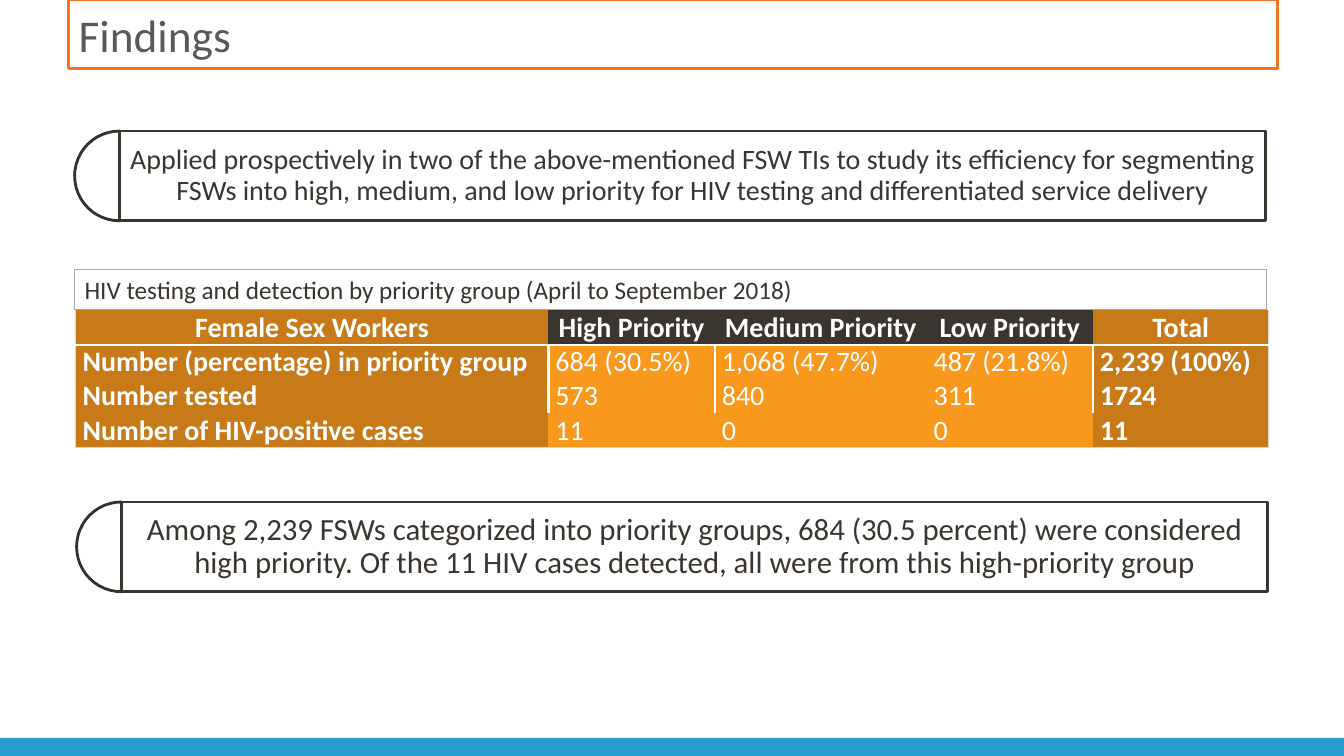
from lxml import etree
from pptx import Presentation
from pptx.dml.color import RGBColor
from pptx.enum.shapes import MSO_SHAPE
from pptx.enum.text import MSO_ANCHOR, MSO_AUTO_SIZE, PP_ALIGN
from pptx.oxml.ns import qn
from pptx.util import Inches, Pt

RECT, PIE = MSO_SHAPE.RECTANGLE, MSO_SHAPE.PIE
LEFT, CENTER = PP_ALIGN.LEFT, PP_ALIGN.CENTER
MIDDLE, TOP = MSO_ANCHOR.MIDDLE, MSO_ANCHOR.TOP
NO_AUTOFIT = MSO_AUTO_SIZE.NONE

WHITE = RGBColor(0xFF, 0xFF, 0xFF)
INK = RGBColor(0x3B, 0x35, 0x2F)
PIE_LINE = RGBColor(0x36, 0x30, 0x2B)
TITLE_GRAY = RGBColor(0x59, 0x59, 0x59)
TITLE_LINE = RGBColor(0xF3, 0x74, 0x21)
CAPTION_LINE = RGBColor(0xA6, 0xA6, 0xA6)
TABLE_EDGE = RGBColor(0xD9, 0xD9, 0xD9)
DARK_ORANGE = RGBColor(0xC7, 0x7A, 0x17)
ORANGE = RGBColor(0xF8, 0x98, 0x1D)
BLUE = RGBColor(0x27, 0x9E, 0xCE)

PLAIN_TABLE_STYLE = "{2D5ABB26-0587-4C30-8999-92F81FD0307C}"

COLUMN_WIDTHS = [4.69, 1.65, 2.1, 1.65, 1.74]
TESTING_ROWS = [
    ["Female Sex Workers", "High Priority", "Medium Priority", "Low Priority", "Total"],
    ["Number (percentage) in priority group", "684 (30.5%)", "1,068 (47.7%)",
     "487 (21.8%)", "2,239 (100%)"],
    ["Number tested", "573", "840", "311", "1724"],
    ["Number of HIV-positive cases", "11", "0", "0", "11"],
]


def write(frame, text, size, color=INK, bold=False, align=LEFT, anchor=MIDDLE,
          spacing=None, inset=None):
    frame.word_wrap = True
    frame.auto_size = NO_AUTOFIT
    frame.vertical_anchor = anchor
    if inset is not None:
        frame.margin_left = frame.margin_right = Inches(inset)
        frame.margin_top = frame.margin_bottom = Inches(inset)
    paragraph = frame.paragraphs[0]
    paragraph.alignment = align
    paragraph.line_spacing = spacing
    run = paragraph.add_run()
    run.text = text
    run.font.name = "Calibri"
    run.font.size = Pt(size)
    run.font.bold = bold
    run.font.color.rgb = color


class FindingsSlide:
    def __init__(self, presentation):
        self.slide = presentation.slides.add_slide(presentation.slide_layouts[5])

    def paint(self, shape, fill, line, width):
        if fill is None:
            shape.fill.background()
        else:
            shape.fill.solid()
            shape.fill.fore_color.rgb = fill
        if line is None:
            shape.line.fill.background()
        else:
            shape.line.color.rgb = line
            shape.line.width = Pt(width)

    def title(self, text, left, top, width, height):
        title = self.slide.shapes.title
        title.left, title.top = Inches(left), Inches(top)
        title.width, title.height = Inches(width), Inches(height)
        self.paint(title, WHITE, TITLE_LINE, 2)
        write(title.text_frame, text, size=32.4, color=TITLE_GRAY)

    def shape(self, kind, left, top, width, height, fill=None, line=None, line_width=2):
        shape = self.slide.shapes.add_shape(
            kind, Inches(left), Inches(top), Inches(width), Inches(height))
        shape.shadow.inherit = False
        self.paint(shape, fill, line, line_width)
        return shape

    def statement(self, text, left, top, size, inset):
        """Half disc joined to a framed sentence."""
        diameter = 0.89
        half_disc = self.shape(PIE, left, top, diameter, diameter, WHITE, PIE_LINE)
        # Start and end angles of 90 and 270 degrees
        half_disc.adjustments[0], half_disc.adjustments[1] = 54, 162
        box = self.shape(RECT, left + diameter / 2, top, 11.37, diameter, line=INK)
        write(box.text_frame, text, size=size, align=CENTER, spacing=0.9, inset=inset)

    def border(self, cell, side, color, width):
        line = etree.SubElement(cell._tc.get_or_add_tcPr(), qn("a:ln" + side),
                                w=str(Pt(width)))
        fill = etree.SubElement(line, qn("a:solidFill"))
        etree.SubElement(fill, qn("a:srgbClr"), val=str(color))

    def table(self, rows, widths, left, top, row_height):
        last_row, last_column = len(rows) - 1, len(widths) - 1
        table = self.slide.shapes.add_table(
            len(rows), len(widths), Inches(left), Inches(top),
            Inches(sum(widths)), Inches(row_height * len(rows))).table
        table._tbl.tblPr.find(qn("a:tableStyleId")).text = PLAIN_TABLE_STYLE
        for column, width in zip(table.columns, widths):
            column.width = Inches(width)
        for r, row in enumerate(rows):
            table.rows[r].height = Inches(row_height)
            for c, text in enumerate(row):
                cell = table.cell(r, c)
                header, outer = r == 0, c in (0, last_column)
                divided = 0 < r < last_row
                # Borders, in the order left, right, bottom
                if c == 0:
                    self.border(cell, "L", TABLE_EDGE, 1)
                elif divided and c in (1, last_column):
                    self.border(cell, "L", WHITE, 2)
                if c == last_column:
                    self.border(cell, "R", TABLE_EDGE, 1)
                elif divided and c in (0, last_column - 1):
                    self.border(cell, "R", WHITE, 2)
                if header:
                    self.border(cell, "B", WHITE, 2)
                elif r == last_row:
                    self.border(cell, "B", TABLE_EDGE, 1)
                # Fill and text
                cell.fill.solid()
                cell.fill.fore_color.rgb = DARK_ORANGE if outer else INK if header else ORANGE
                cell.margin_left = cell.margin_right = Inches(0.07)
                cell.margin_top = cell.margin_bottom = 0
                cell.vertical_anchor = MIDDLE if header else TOP
                write(cell.text_frame, text, size=20, color=WHITE,
                      bold=header or outer, align=CENTER if header else LEFT, anchor=None)
                cell.vertical_anchor = MIDDLE if header else TOP


def main():
    presentation = Presentation()
    presentation.slide_width, presentation.slide_height = Inches(13.33), Inches(7.5)
    findings = FindingsSlide(presentation)

    # Footer band and title
    findings.shape(RECT, 0, 7.32, 13.33, 0.18, fill=BLUE)
    findings.title("Findings", 0.68, 0, 11.99, 0.68)

    # Study approach
    findings.statement(
        "Applied prospectively in two of the above-mentioned FSW TIs to study its "
        "efficiency for segmenting FSWs into high, medium, and low priority for HIV "
        "testing and differentiated service delivery", 0.74, 1.3, size=20, inset=0.08)

    # Testing results
    findings.table(TESTING_ROWS, COLUMN_WIDTHS, 0.75, 3.08, row_height=0.34)
    caption = findings.shape(RECT, 0.74, 2.67, 11.82, 0.4, WHITE, CAPTION_LINE, 0.75)
    write(caption.text_frame,
          "HIV testing and detection by priority group (April to September 2018)", size=18)

    # Conclusion
    findings.statement(
        "Among 2,239 FSWs categorized into priority groups, 684 (30.5 percent) were "
        "considered high priority. Of the 11 HIV cases detected, all were from this "
        "high-priority group", 0.76, 4.98, size=22, inset=0.09)

    presentation.save("out.pptx")


if __name__ == "__main__":
    main()
